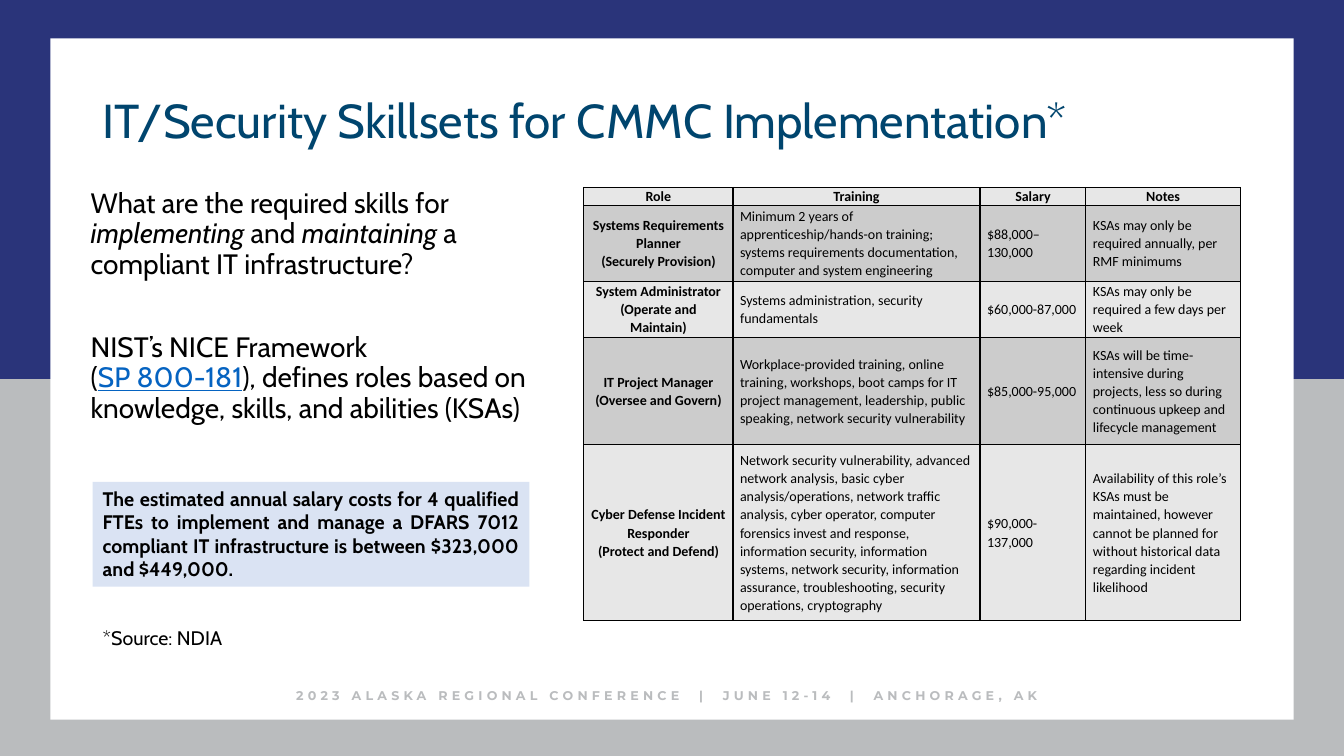
import pptx
import pptx.util
import pptx.dml.color
import pptx.enum.shapes
import pptx.enum.text
import pptx.oxml
import pptx.oxml.ns
from dataclasses import dataclass

Inches, Pt = pptx.util.Inches, pptx.util.Pt
ALIGN = pptx.enum.text.PP_ALIGN
ANCHOR = pptx.enum.text.MSO_ANCHOR


@dataclass(frozen=True)
class Theme:
    navy: str = "2A347A"
    gray: str = "BABCBE"
    title: str = "00456E"
    ink: str = "000000"
    link: str = "0563C1"
    callout: str = "DAE3F3"
    bands: tuple = ("E7E7E7", "CCCCCC")
    font: str = "Cabin"
    table_font: str = "Calibri"
    footer_font: str = "Montserrat"
    title_size: int = 34
    body_size: int = 20
    callout_size: int = 14
    table_size: int = 10
    footer_size: int = 9


THEME = Theme()
WIDTH, HEIGHT = 13.33, 7.5

TITLE = "IT/Security Skillsets for CMMC Implementation*"
FOOTER = "2023 ALASKA REGIONAL CONFERENCE  |  JUNE 12-14  |  ANCHORAGE, AK"
# Each run is its text and its style; "\n" alone is a line break.
QUESTIONS = [
    [("What are the required skills for ", ""), ("implementing", "italic"), (" and ", ""),
     ("maintaining", "italic"), (" a compliant IT infrastructure?", "")],
    [("NIST’s NICE Framework", ""), ("\n", ""), ("(", ""), ("SP 800-181", "link"),
     ("), defines roles based on knowledge, skills, and abilities (KSAs)", "")],
]
CALLOUT = ("The estimated annual salary costs for 4 qualified FTEs to implement and manage a "
           "DFARS 7012 compliant IT infrastructure is between $323,000 and $449,000.")
SOURCE = "*Source: NDIA"
ROLES = [
    (["Role"], ["Training"], ["Salary"], ["Notes"]),
    (["Systems Requirements Planner", "(Securely Provision)"],
     ["Minimum 2 years of apprenticeship/hands-on training; systems requirements "
      "documentation, computer and system engineering"],
     ["$88,000–130,000"],
     ["KSAs may only be required annually, per RMF minimums"]),
    (["System Administrator", "(Operate and Maintain)"],
     ["Systems administration, security fundamentals"],
     ["$60,000-87,000"],
     ["KSAs may only be required a few days per week"]),
    (["IT Project Manager", "(Oversee and Govern)"],
     ["Workplace-provided training, online training, workshops, boot camps for IT project "
      "management, leadership, public speaking, network security vulnerability"],
     ["$85,000-95,000"],
     ["KSAs will be time-intensive during projects, less so during continuous upkeep and "
      "lifecycle management"]),
    (["Cyber Defense Incident Responder", "(Protect and Defend)"],
     ["Network security vulnerability, advanced network analysis, basic cyber "
      "analysis/operations, network traffic analysis, cyber operator, computer forensics "
      "invest and response, information security, information systems, network security, "
      "information assurance, troubleshooting, security operations, cryptography"],
     ["$90,000-137,000"],
     ["Availability of this role’s KSAs must be maintained, however cannot be planned for "
      "without historical data regarding incident likelihood"]),
]
COLUMNS = (1.48, 2.45, 1.05, 1.53)
ROWS = (0.18, 0.75, 0.56, 1.06, 1.75)

LEFT = 0.92
SIDE, TOP_BAND, BOTTOM_BAND = 0.5, 0.38, 0.36
NAVY_DEPTH = HEIGHT / 2 + 0.01


def color(value):
    return pptx.dml.color.RGBColor.from_string(value)


def add_run(paragraph, text, size, ink=THEME.ink, font=THEME.font, bold=False):
    run = paragraph.add_run()
    run.text = text
    run.font.size, run.font.name, run.font.bold = Pt(size), font, bold
    run.font.color.rgb = color(ink)
    return run


def add_block(slide, left, top, width, height, fill):
    shape = slide.shapes.add_shape(pptx.enum.shapes.MSO_SHAPE.RECTANGLE,
                                   *map(Inches, (left, top, width, height)))
    shape.shadow.inherit = False
    shape.fill.solid()
    shape.fill.fore_color.rgb = color(fill)
    shape.line.fill.background()
    return shape


def add_text_frame(slide, left, top, width, height):
    frame = slide.shapes.add_textbox(*map(Inches, (left, top, width, height))).text_frame
    frame.word_wrap = True
    return frame


def add_frame(slide):
    """Draw the two-tone border around the white page, with the footer line."""
    right = WIDTH - SIDE
    add_block(slide, 0, 0, WIDTH, TOP_BAND, THEME.navy)
    add_block(slide, 0, HEIGHT - BOTTOM_BAND, WIDTH, BOTTOM_BAND, THEME.gray)
    for left in (0, right):
        add_block(slide, left, NAVY_DEPTH, SIDE, HEIGHT - NAVY_DEPTH, THEME.gray)
        add_block(slide, left, 0, SIDE, NAVY_DEPTH, THEME.navy)
    paragraph = add_text_frame(slide, 0.44, 6.77, 12.34, 0.25).paragraphs[0]
    paragraph.alignment = ALIGN.CENTER
    run = add_run(paragraph, FOOTER, THEME.footer_size, THEME.gray, THEME.footer_font, True)
    run.font._element.set("spc", "300")


def add_title(slide):
    title = slide.shapes.title
    title.left, title.top, title.width, title.height = map(Inches, (LEFT, 0.5, 11.5, 1.45))
    frame = title.text_frame
    frame.auto_size = pptx.enum.text.MSO_AUTO_SIZE.NONE
    frame.vertical_anchor = ANCHOR.MIDDLE
    paragraph = frame.paragraphs[0]
    paragraph.alignment, paragraph.line_spacing = ALIGN.LEFT, 0.9
    add_run(paragraph, TITLE, THEME.title_size, THEME.title)


def add_questions(slide):
    frame = add_text_frame(slide, 0.8, 1.83, 4.75, 2.8)
    for index, runs in enumerate(QUESTIONS):
        paragraph = frame.add_paragraph() if index else frame.paragraphs[0]
        paragraph.line_spacing = 0.9
        if index:
            paragraph.space_before = Pt(38)
        for text, style in runs:
            if text == "\n":
                paragraph.add_line_break()
                continue
            is_link = style == "link"
            run = add_run(paragraph, text, THEME.body_size, THEME.link if is_link else THEME.ink)
            run.font.italic, run.font.underline = style == "italic", is_link


def add_callout(slide):
    frame = add_block(slide, LEFT, 4.78, 4.33, 1.04, THEME.callout).text_frame
    frame.word_wrap, frame.vertical_anchor = True, ANCHOR.TOP
    frame.paragraphs[0].alignment = ALIGN.JUSTIFY
    add_run(frame.paragraphs[0], CALLOUT, THEME.callout_size, bold=True)


def set_borders(cell):
    properties = cell._tc.get_or_add_tcPr()
    for side in ("lnL", "lnR", "lnT", "lnB"):
        properties.append(pptx.oxml.parse_xml(
            f'<a:{side} {pptx.oxml.ns.nsdecls("a")} w="12700"><a:solidFill>'
            f'<a:srgbClr val="{THEME.ink}"/></a:solidFill></a:{side}>'))


def fill_cell(cell, lines, row, column):
    is_heading = row == 0 or column == 0
    set_borders(cell)
    cell.fill.solid()
    cell.fill.fore_color.rgb = color(THEME.bands[row % 2])
    cell.margin_left = cell.margin_right = Inches(0.07)
    cell.margin_top = cell.margin_bottom = 0
    cell.vertical_anchor = ANCHOR.MIDDLE if row else ANCHOR.TOP
    for index, line in enumerate(lines):
        frame = cell.text_frame
        paragraph = frame.add_paragraph() if index else frame.paragraphs[0]
        paragraph.alignment = ALIGN.CENTER if is_heading else ALIGN.LEFT
        paragraph.line_spacing = 1.07
        add_run(paragraph, line, THEME.table_size, font=THEME.table_font, bold=is_heading)


def add_roles(slide):
    table = slide.shapes.add_table(len(ROWS), len(COLUMNS), *map(
        Inches, (5.79, 1.86, sum(COLUMNS), sum(ROWS)))).table
    for column, width in zip(table.columns, COLUMNS):
        column.width = Inches(width)
    for row, height in zip(table.rows, ROWS):
        row.height = Inches(height)
    for row, cells in enumerate(ROLES):
        for column, lines in enumerate(cells):
            fill_cell(table.cell(row, column), lines, row, column)


def main():
    presentation = pptx.Presentation()
    presentation.slide_width, presentation.slide_height = Inches(WIDTH), Inches(HEIGHT)
    slide = presentation.slides.add_slide(presentation.slide_layouts[5])
    add_frame(slide)
    add_title(slide)
    add_questions(slide)
    add_roles(slide)
    add_callout(slide)
    source = add_text_frame(slide, LEFT, 6.16, 2.51, 0.34)
    add_run(source.paragraphs[0], SOURCE, THEME.callout_size)
    presentation.save("out.pptx")


if __name__ == "__main__":
    main()
